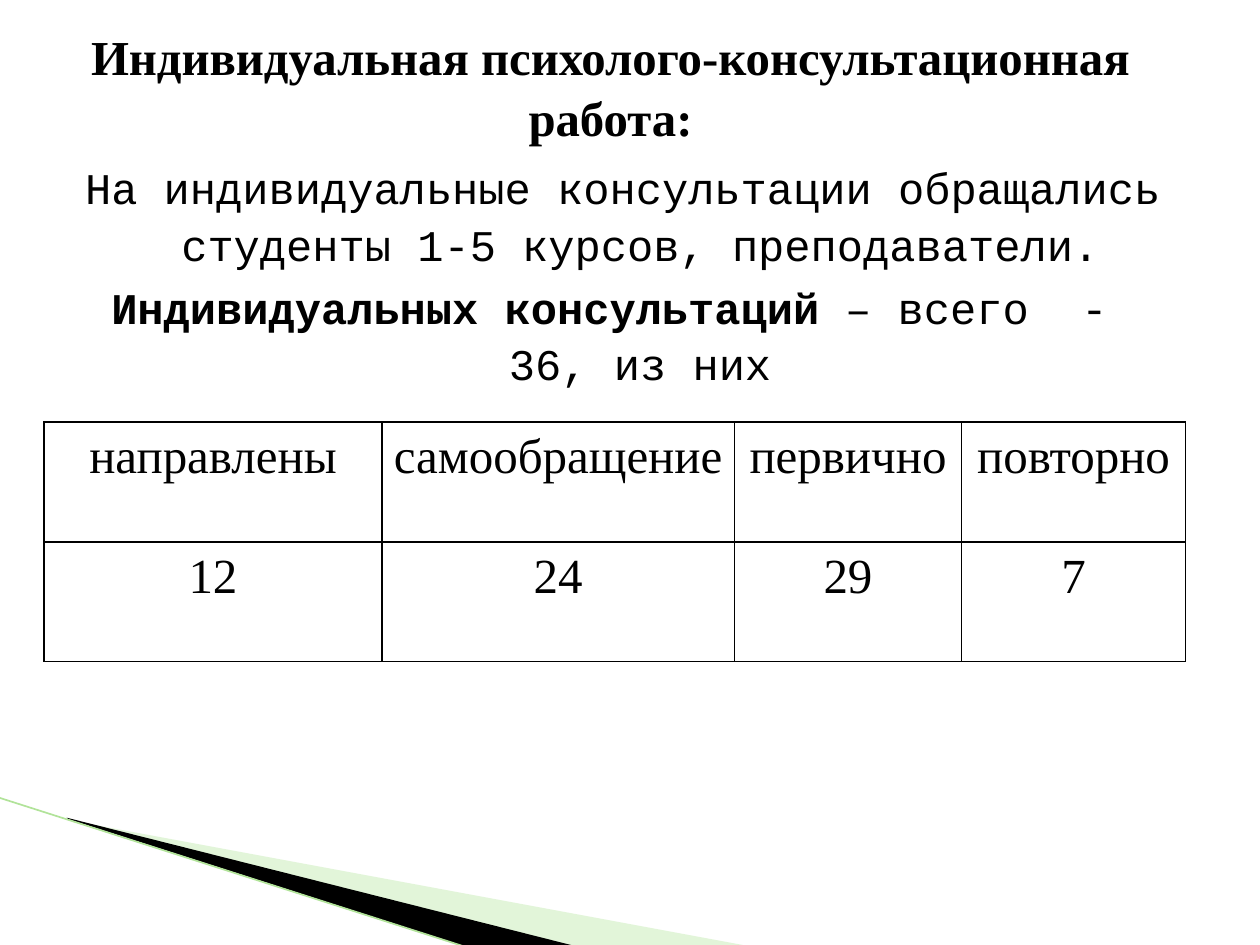
from lxml import etree
from pptx import Presentation
from pptx.dml.color import RGBColor
from pptx.enum.shapes import MSO_CONNECTOR
from pptx.enum.text import MSO_ANCHOR, PP_ALIGN
from pptx.oxml.ns import qn
from pptx.util import Inches, Pt

CENTER = PP_ALIGN.CENTER
TOP = MSO_ANCHOR.TOP
STRAIGHT = MSO_CONNECTOR.STRAIGHT

COLORS = {"ink": "000000", "pale": "B8E7A1", "edge": "B1E399"}
SERIF, MONO = "Times New Roman", "Courier New"

TITLE = "Индивидуальная психолого-консультационная работа:"
BODY = [
    [("На индивидуальные консультации обращались студенты 1-5 курсов, преподаватели.", False)],
    [("Индивидуальных консультаций", True), (" – всего  -  36, из них", False)],
]
CONSULTATIONS = [
    ["направлены", "самообращение", "первично", "повторно"],
    ["12", "24", "29", "7"],
]
COLUMN_WIDTHS = [2.68, 2.8, 1.8, 1.78]
ROW_HEIGHT = 0.95


def color(name):
    return RGBColor.from_string(COLORS[name])


def set_all(target, values):
    for name, value in values.items():
        setattr(target, name, value)


def add_run(paragraph, text, font, size, bold=False):
    run = paragraph.add_run()
    run.text = text
    set_all(run.font, {"name": font, "size": Pt(size), "bold": bold})
    run.font.color.rgb = color("ink")


def add_text_frame(slide, box, inset_top):
    frame = slide.shapes.add_textbox(*map(Inches, box)).text_frame
    set_all(frame, {"word_wrap": True, "vertical_anchor": TOP,
                    "margin_top": Inches(inset_top), "margin_bottom": 0})
    return frame


def add_title(slide, box):
    paragraph = add_text_frame(slide, box, 0).paragraphs[0]
    set_all(paragraph, {"alignment": CENTER, "line_spacing": 1.03})
    add_run(paragraph, TITLE, SERIF, 27.9, True)


def add_body(slide, box):
    frame = add_text_frame(slide, box, 0.1)
    for index, runs in enumerate(BODY):
        paragraph = frame.add_paragraph() if index else frame.paragraphs[0]
        set_all(paragraph, {"alignment": CENTER, "line_spacing": 1.07,
                            "space_before": Pt(4 if index else 0)})
        properties = paragraph._p.get_or_add_pPr()
        properties.set("marL", str(Inches(0.4)))
        properties.set("indent", str(Inches(-0.28)))
        for text, bold in runs:
            add_run(paragraph, text, MONO, 25, bold)


def add_borders(cell):
    """Draw a thin line on each side; called before the cell gets its fill."""
    properties = cell._tc.get_or_add_tcPr()
    for side in ("a:lnL", "a:lnR", "a:lnT", "a:lnB"):
        border = etree.SubElement(properties, qn(side), w=str(Pt(1)))
        fill = etree.SubElement(border, qn("a:solidFill"))
        etree.SubElement(fill, qn("a:srgbClr"), val=COLORS["ink"])


def add_consultations(slide, left, top):
    rows, columns = len(CONSULTATIONS), len(COLUMN_WIDTHS)
    table = slide.shapes.add_table(
        rows, columns, Inches(left), Inches(top),
        Inches(sum(COLUMN_WIDTHS)), Inches(rows * ROW_HEIGHT)).table
    set_all(table, {"first_row": False, "horz_banding": False})
    for column, width in zip(table.columns, COLUMN_WIDTHS):
        column.width = Inches(width)
    for row, values in zip(table.rows, CONSULTATIONS):
        row.height = Inches(ROW_HEIGHT)
        for cell, value in zip(row.cells, values):
            add_borders(cell)
            cell.fill.background()
            set_all(cell, {"margin_left": Inches(0.07), "margin_right": Inches(0.07),
                           "margin_top": 0, "margin_bottom": 0})
            paragraph = cell.text_frame.paragraphs[0]
            set_all(paragraph, {"alignment": CENTER, "line_spacing": 1.15})
            add_run(paragraph, value, SERIF, 28)


def add_wedge(slide, points, fill, opacity=None):
    start, *others = [(Inches(x), Inches(y)) for x, y in points]
    builder = slide.shapes.build_freeform(*start)
    builder.add_line_segments(others, close=True)
    wedge = builder.convert_to_shape()
    wedge.shadow.inherit = False
    wedge.fill.solid()
    wedge.fill.fore_color.rgb = color(fill)
    wedge.line.fill.background()
    if opacity:
        shade = wedge._element.spPr.find(qn("a:solidFill"))[0]
        etree.SubElement(shade, qn("a:alpha"), val=str(opacity * 1000))


def add_corner(slide, left, top):
    """Decorate the lower left corner with two wedges and an edge line."""
    def place(points):
        return [(left + x, top + y) for x, y in points]

    add_wedge(slide, place([(0.55, 0.18), (5.95, 1.18), (4.56, 1.18), (0.55, 0.17)]),
              "pale", 40)
    add_wedge(slide, place([(0.53, 0.16), (4.57, 1.18), (3.72, 1.19), (0.54, 0.17)]), "ink")
    (x1, y1), (x2, y2) = place([(-0.01, 0), (3.71, 1.19)])
    edge = slide.shapes.add_connector(STRAIGHT, *map(Inches, (x1, y1, x2, y2)))
    edge.line.color.rgb = color("edge")
    edge.line.width = Pt(0.95)
    etree.SubElement(edge._element.spPr, qn("a:effectLst"))


def main():
    presentation = Presentation()
    set_all(presentation, {"slide_width": Inches(10), "slide_height": Inches(7.5)})
    slide = presentation.slides.add_slide(presentation.slide_layouts[6])
    add_corner(slide, 0, 6.33)
    add_body(slide, (0.35, 1.15, 9.06, 2.05))
    add_title(slide, (0.2, 0.2, 9.29, 1.25))
    add_consultations(slide, 0.35, 3.35)
    presentation.save("out.pptx")


if __name__ == "__main__":
    main()
